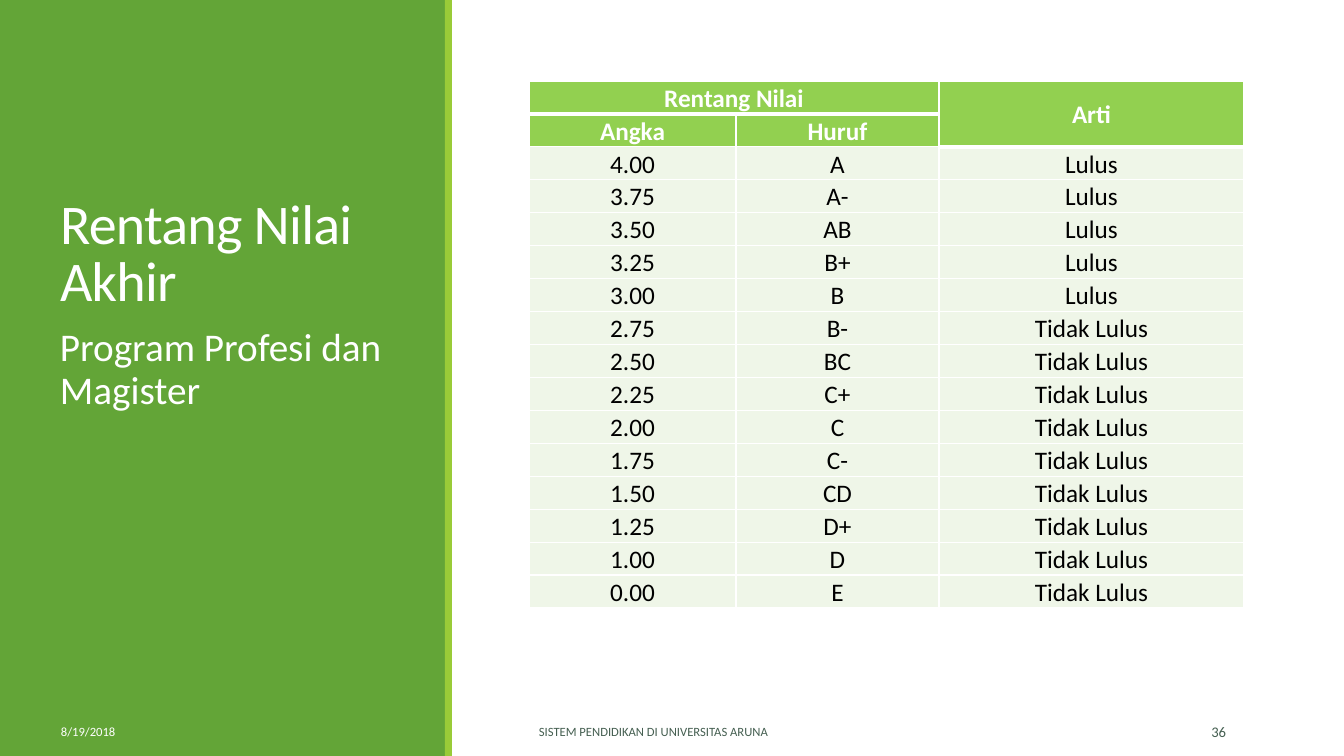
from lxml.etree import SubElement
from pptx import Presentation
from pptx.dml.color import RGBColor
from pptx.enum.shapes import MSO_SHAPE
from pptx.enum.text import MSO_ANCHOR, MSO_AUTO_SIZE, PP_ALIGN
from pptx.oxml.ns import qn
from pptx.util import Pt

TITLE = "Rentang Nilai Akhir"
SUBTITLE = "Program Profesi dan Magister"
DATE = "8/19/2018"
FOOTER = "SISTEM PENDIDIKAN DI UNIVERSITAS ARUNA"
PAGE = "36"
HEADER = [("Rentang Nilai", "", "Arti"), ("Angka", "Huruf", "")]
GRADES = [
    ("4.00", "A"), ("3.75", "A-"), ("3.50", "AB"), ("3.25", "B+"), ("3.00", "B"),
    ("2.75", "B-"), ("2.50", "BC"), ("2.25", "C+"), ("2.00", "C"), ("1.75", "C-"),
    ("1.50", "CD"), ("1.25", "D+"), ("1.00", "D"), ("0.00", "E"),
]
PASS_MARK = 3

WHITE = RGBColor(0xFF, 0xFF, 0xFF)
BLACK = RGBColor(0, 0, 0)
GREEN = RGBColor(0x63, 0xA5, 0x37)
LIME = RGBColor(0x99, 0xCB, 0x38)
HEAD_FILL = RGBColor(0x92, 0xD0, 0x50)
BODY_FILL = RGBColor(0xEF, 0xF6, 0xE8)
SLATE = RGBColor(0x45, 0x5F, 0x51)
FONT = "Calibri"
NO_STYLE = "{2D5ABB26-0587-4C30-8999-92F81FD0307C}"

SLIDE_W, SLIDE_H = 1344, 756
TABLE_X, TABLE_Y, ROW_H = 529, 81, 32
COL_W = [207, 203, 305]
FOOT_Y, FOOT_H = 712, 40


def px(n):
    return round(n * 914400 / 100.8)


def format_text(p, size, color, align=PP_ALIGN.LEFT, bold=False):
    p.alignment = align
    p.font.name = FONT
    p.font.size = Pt(size)
    p.font.bold = bold
    p.font.color.rgb = color


def add_bar(slide, x, w, color):
    """Add a full-height bar behind the title."""
    sp = slide.shapes.add_shape(MSO_SHAPE.RECTANGLE, px(x), 0, px(w), px(SLIDE_H))
    sp.shadow.inherit = False
    sp.fill.solid()
    sp.fill.fore_color.rgb = color
    sp.line.fill.background()
    slide.shapes.title.element.addprevious(sp.element)


def add_text(slide, text, x, y, w, h, size, color,
             align=PP_ALIGN.LEFT, anchor=MSO_ANCHOR.MIDDLE):
    tf = slide.shapes.add_textbox(px(x), px(y), px(w), px(h)).text_frame
    tf.word_wrap = True
    tf.vertical_anchor = anchor
    p = tf.paragraphs[0]
    p.text = text
    format_text(p, size, color, align)
    return p


def set_border(cell, side, width):
    ln = SubElement(cell._tc.get_or_add_tcPr(), qn(f"a:ln{side}"), w=str(Pt(width)))
    fill = SubElement(ln, qn("a:solidFill"))
    SubElement(fill, qn("a:srgbClr"), val=str(WHITE))


def format_cell(cell, row, col):
    is_head = row < len(HEADER)
    thick_top = (row, col) in [(1, 0), (1, 1), (2, 2)]
    thick_bottom = row == 0 or (row, col) == (1, 2)
    for side, thick in zip("LRTB", (False, False, thick_top, thick_bottom)):
        set_border(cell, side, 3 if thick else 1)
    cell.fill.solid()
    cell.fill.fore_color.rgb = HEAD_FILL if is_head else BODY_FILL
    cell.margin_left = cell.margin_right = px(9)
    cell.margin_top = cell.margin_bottom = 0
    p = cell.text_frame.paragraphs[0]
    p.line_spacing = 1.07
    format_text(p, 18, WHITE if is_head else BLACK, PP_ALIGN.CENTER, is_head)


def add_grade_table(slide):
    rows = HEADER + [(number, letter, "Lulus" if float(number) >= PASS_MARK else "Tidak Lulus")
                     for number, letter in GRADES]
    table = slide.shapes.add_table(len(rows), len(COL_W), px(TABLE_X), px(TABLE_Y),
                                   px(sum(COL_W)), px(ROW_H * len(rows))).table
    table._tbl.tblPr.find(qn("a:tableStyleId")).text = NO_STYLE
    table.first_row = table.horz_banding = False
    for column, w in zip(table.columns, COL_W):
        column.width = px(w)
    for r, row in enumerate(rows):
        table.rows[r].height = px(ROW_H)
        for c, text in enumerate(row):
            cell = table.cell(r, c)
            cell.text = text
            format_cell(cell, r, c)
    table.cell(0, 0).merge(table.cell(0, 1))
    table.cell(0, 2).merge(table.cell(1, 2))
    table.cell(0, 2).vertical_anchor = MSO_ANCHOR.MIDDLE


def add_title(slide):
    title = slide.shapes.title
    title.left, title.top, title.width, title.height = map(px, (50, 66, 353, 252))
    tf = title.text_frame
    tf.word_wrap = True
    tf.auto_size = MSO_AUTO_SIZE.NONE
    tf.vertical_anchor = MSO_ANCHOR.BOTTOM
    p = tf.paragraphs[0]
    r = p.add_run()
    r.text = TITLE
    r._r.get_or_add_rPr().set("spc", "-50")
    p.line_spacing = 0.85
    format_text(p, 40, WHITE)


def main():
    prs = Presentation()
    prs.slide_width, prs.slide_height = px(SLIDE_W), px(SLIDE_H)
    slide = prs.slides.add_slide(prs.slide_layouts[5])
    add_bar(slide, 0, 446, GREEN)
    add_bar(slide, 445, 7, LIME)
    add_title(slide)
    add_grade_table(slide)
    p = add_text(slide, SUBTITLE, 50, 323, 353, 373, 28, WHITE, anchor=MSO_ANCHOR.TOP)
    p.line_spacing = 0.9
    p.space_before, p.space_after = Pt(12), Pt(2)
    add_text(slide, DATE, 51, FOOT_Y, 288, FOOT_H, 9, WHITE)
    add_text(slide, FOOTER, 529, FOOT_Y, 512, FOOT_H, 9, SLATE)
    add_text(slide, PAGE, 1092, FOOT_Y, 144, FOOT_H, 10.5, SLATE, PP_ALIGN.RIGHT)
    prs.save("out.pptx")


if __name__ == "__main__":
    main()
